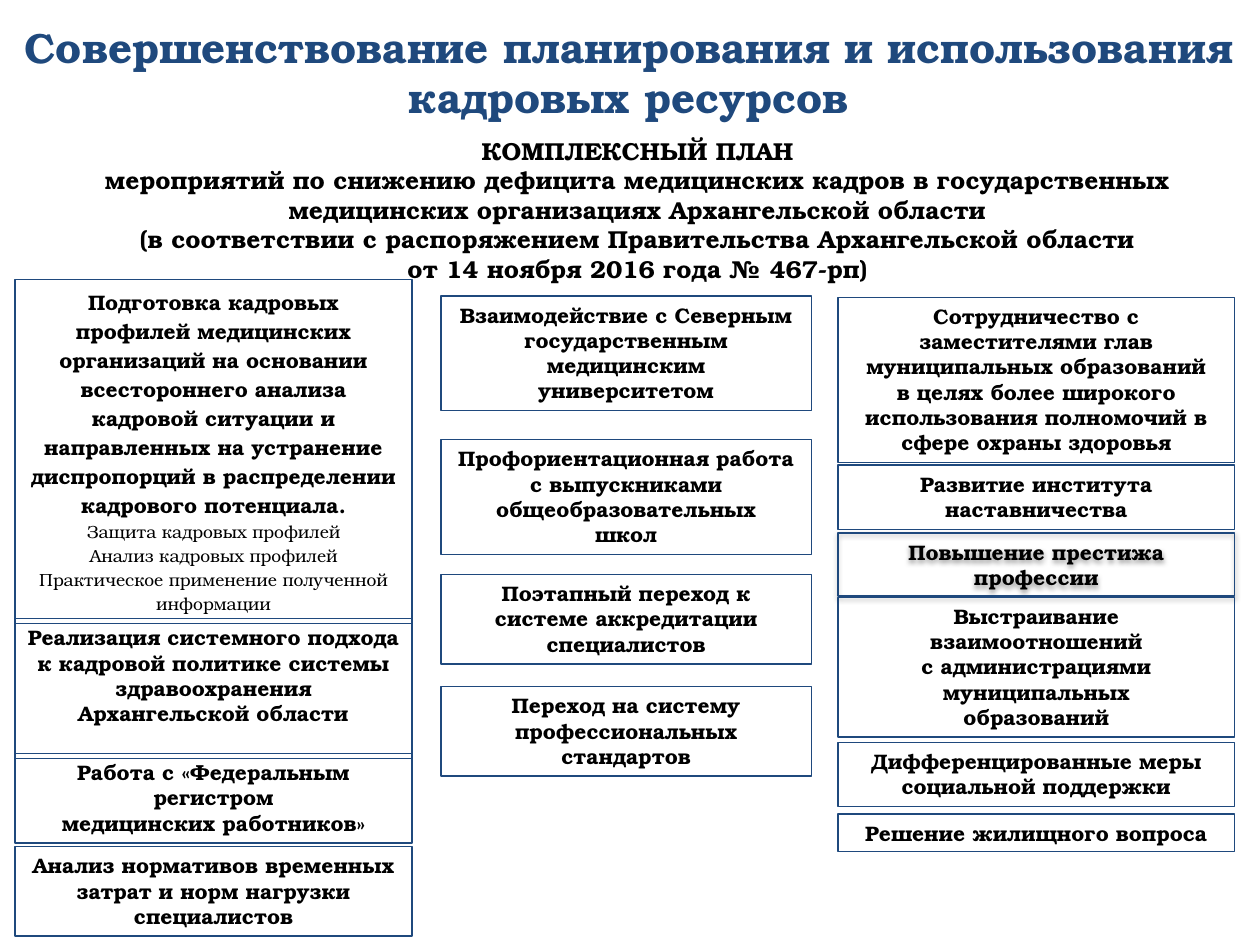
import pptx
import pptx.util
import pptx.dml.color
import pptx.enum.shapes
import pptx.enum.text
import lxml.etree
from dataclasses import dataclass

Inches, Pt = pptx.util.Inches, pptx.util.Pt
RGBColor = pptx.dml.color.RGBColor


@dataclass(frozen=True)
class Theme:
    font: str = "TeX Gyre Bonum"
    navy: RGBColor = RGBColor(0x1F, 0x49, 0x7D)
    black: RGBColor = RGBColor(0, 0, 0)
    title: int = 24
    heading: int = 14
    body: int = 12
    detail: int = 10
    outline: float = 0.75


theme = Theme()


def write(shape, lines, size, color):
    """Fill a shape with centred bold paragraphs, one per line."""
    frame = shape.text_frame
    frame.word_wrap = True
    frame.vertical_anchor = pptx.enum.text.MSO_ANCHOR.TOP
    frame.text = "\n".join(lines)
    for para in frame.paragraphs:
        para.alignment = pptx.enum.text.PP_ALIGN.CENTER
        for span in para.runs:
            span.font.name = theme.font
            span.font.size = Pt(size)
            span.font.bold = True
            span.font.color.rgb = color


def add_soft_shadow(shape):
    namespace = "http://schemas.openxmlformats.org/drawingml/2006/main"
    effects = shape._element.spPr.find(f"{{{namespace}}}effectLst")
    effects.append(lxml.etree.fromstring(
        f'<a:outerShdw xmlns:a="{namespace}" blurRad="{Pt(3.1)}" dist="{Pt(1.6)}" '
        'dir="5400000" rotWithShape="0"><a:srgbClr val="000000">'
        '<a:alpha val="38000"/></a:srgbClr></a:outerShdw>'))


deck = pptx.Presentation()
deck.slide_width, deck.slide_height = Inches(10), Inches(7.5)
page = deck.slides.add_slide(deck.slide_layouts[6])

title = page.shapes.add_textbox(Inches(-0.02), Inches(0.12), Inches(10.02), Inches(0.91))
write(title, ["Совершенствование планирования и использования", "кадровых ресурсов"],
      theme.title, theme.navy)

plan = page.shapes.add_textbox(Inches(0.12), Inches(1.03), Inches(9.88), Inches(1.28))
write(plan, [
    "КОМПЛЕКСНЫЙ ПЛАН",
    "мероприятий по снижению дефицита медицинских кадров в государственных "
    "медицинских организациях Архангельской области",
    "(в соответствии с распоряжением Правительства Архангельской области",
    "от 14 ноября 2016 года № 467-рп)",
], theme.heading, theme.black)

# Each column: left, width, then boxes as (top, height, lines).
columns = [
    (0.12, 3.15, [
        (2.22, 2.73, ["Подготовка кадровых профилей медицинских организаций на основании "
                      "всестороннего анализа кадровой ситуации и направленных на устранение "
                      "диспропорций в распределении кадрового потенциала.",
                      "Защита кадровых профилей",
                      "Анализ кадровых профилей",
                      "Практическое применение полученной информации"]),
        (4.91, 1.11, ["Реализация системного подхода",
                      "к кадровой политике системы",
                      "здравоохранения Архангельской области"]),
        (5.98, 0.71, ["Работа с «Федеральным регистром", "медицинских работников»"]),
        (6.72, 0.71, ["Анализ нормативов временных", "затрат и норм нагрузки специалистов"]),
    ]),
    (3.5, 2.94, [
        (2.35, 0.91, ["Взаимодействие с Северным", "государственным медицинским",
                      "университетом"]),
        (3.49, 0.91, ["Профориентационная работа", "с выпускниками общеобразовательных",
                      "школ"]),
        (4.56, 0.71, ["Поэтапный переход к", "системе аккредитации специалистов"]),
        (5.45, 0.71, ["Переход на систему", "профессиональных стандартов"]),
    ]),
    (6.65, 3.15, [
        (2.36, 1.31, ["Сотрудничество с заместителями глав муниципальных образований",
                      "в целях более широкого использования полномочий в сфере охраны здоровья"]),
        (3.69, 0.51, ["Развитие института наставничества"]),
        (4.23, 0.5, ["Повышение престижа профессии"]),
        (4.74, 1.11, ["Выстраивание взаимоотношений", "с администрациями муниципальных",
                      "образований"]),
        (5.89, 0.51, ["Дифференцированные меры социальной поддержки"]),
        (6.46, 0.3, ["Решение жилищного вопроса"]),
    ]),
]

boxes = {}
for left, width, measures in columns:
    for top, height, lines in measures:
        box = page.shapes.add_shape(pptx.enum.shapes.MSO_SHAPE.RECTANGLE,
                                    Inches(left), Inches(top), Inches(width), Inches(height))
        box.shadow.inherit = False
        box.fill.background()
        box.line.color.rgb = theme.navy
        box.line.width = Pt(theme.outline)
        write(box, lines, theme.body, theme.black)
        boxes[lines[0].split()[0]] = box

add_soft_shadow(boxes["Повышение"])

profiles = boxes["Подготовка"].text_frame.paragraphs
for para in profiles:
    para.line_spacing = 1.15
for para in profiles[1:]:
    for span in para.runs:
        span.font.size = Pt(theme.detail)
        span.font.bold = False

deck.save("out.pptx")
